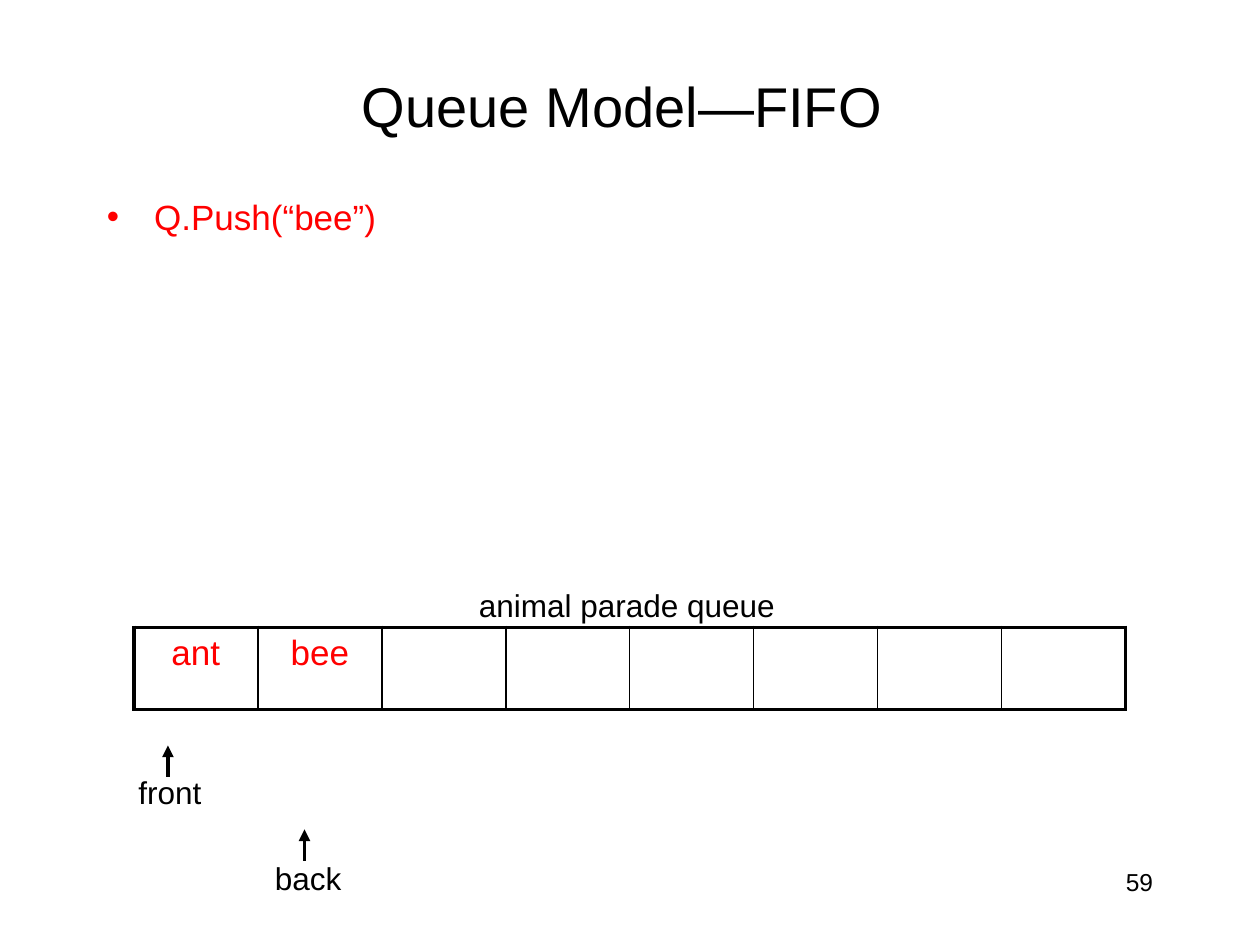
from pptx import Presentation
from pptx import util as u
from pptx.dml.color import RGBColor
from pptx.enum import shapes, text
from pptx.oxml.xmlchemy import OxmlElement

Pt = u.Pt
COLORS = {"ink": "000000", "accent": "FF0000"}
FONT = "Arial"
THICK, THIN = 2.25, 1


def add_element(parent, tag, **attributes):
    element = OxmlElement(tag)
    for name, value in attributes.items():
        element.set(name, str(value))
    parent.append(element)
    return element


def write(frame, words, size, color="ink", align=text.PP_ALIGN.LEFT):
    paragraph = frame.paragraphs[0]
    paragraph.text = words
    paragraph.alignment = align
    paragraph.font.name = FONT
    paragraph.font.size = Pt(size)
    paragraph.font.color.rgb = RGBColor.from_string(COLORS[color])


def add_text(parent, box, words, size, wrap=True, **style):
    shape = parent.add_textbox(*(Pt(length) for length in box))
    shape.text_frame.word_wrap = wrap
    write(shape.text_frame, words, size, **style)
    return shape


def place_title(slide, box, words):
    title = slide.shapes.title
    title.left, title.top, title.width, title.height = (Pt(length) for length in box)
    title.text_frame.vertical_anchor = text.MSO_ANCHOR.MIDDLE
    write(title.text_frame, words, 32, align=text.PP_ALIGN.CENTER)


def add_bullet(slide, box, words):
    left, top, width, height = (Pt(length) for length in box)
    shape = slide.shapes.add_textbox(left, top, width, height)
    shape.text_frame.word_wrap = True
    properties = shape.text_frame.paragraphs[0]._p.get_or_add_pPr()
    properties.set("marL", str(Pt(27)))
    properties.set("indent", str(-Pt(27)))
    add_element(properties, "a:buFont", typeface=FONT)
    add_element(properties, "a:buChar", char="•")
    write(shape.text_frame, words, 20, "accent")


def add_border(cell, side, width):
    line = add_element(cell._tc.get_or_add_tcPr(), f"a:ln{side}", w=Pt(width))
    fill = add_element(line, "a:solidFill")
    add_element(fill, "a:srgbClr", val=COLORS["ink"])


def add_queue(slide, box, items, slots):
    left, top, width, height = box
    add_text(slide.shapes, (left + 190, top - 27.4, 183.6, 28.8),
             "animal parade queue", 18, wrap=False)
    table = slide.shapes.add_table(1, slots, *(Pt(length) for length in box)).table
    table.first_row = table.horz_banding = False
    table.rows[0].height = Pt(height)
    for index in range(slots):
        table.columns[index].width = Pt(width / slots)
        cell = table.cell(0, index)
        add_border(cell, "L", THICK if index == 0 else THIN)
        add_border(cell, "R", THICK if index == slots - 1 else THIN)
        add_border(cell, "T", THICK)
        add_border(cell, "B", THICK)
        cell.fill.background()
        words = items[index] if index < len(items) else ""
        write(cell.text_frame, words, 20, "accent", text.PP_ALIGN.CENTER)


def add_pointer(slide, box, words, arrow_bottom):
    left, top, width, height = box
    group = slide.shapes.add_group_shape()
    add_text(group.shapes, box, words, 18, wrap=False)
    x, bottom = left + 24, top + arrow_bottom
    arrow = group.shapes.add_connector(
        shapes.MSO_CONNECTOR.STRAIGHT, Pt(x), Pt(bottom), Pt(x), Pt(bottom - 18))
    arrow.line.width = Pt(THICK)
    arrow.line.color.rgb = RGBColor.from_string(COLORS["ink"])
    add_element(arrow.line._get_or_add_ln(), "a:tailEnd", type="triangle")
    add_element(arrow._element.spPr, "a:effectLst")


def main():
    presentation = Presentation()
    presentation.slide_width, presentation.slide_height = Pt(720), Pt(540)
    slide = presentation.slides.add_slide(presentation.slide_layouts[5])
    place_title(slide, (54, 30, 612, 60), "Queue Model—FIFO ")
    add_bullet(slide, (54, 108, 612, 180), "Q.Push(“bee”)")
    add_queue(slide, (76.5, 358.5, 566.8, 46.8), ["ant", "bee"], 8)
    add_pointer(slide, (72, 438, 50.4, 28.8), "front", 6)
    add_pointer(slide, (150, 487.2, 52.6, 28.8), "back", 4.8)
    add_text(slide.shapes, (516, 492, 150, 36), "59", 14, align=text.PP_ALIGN.RIGHT)
    presentation.save("out.pptx")


if __name__ == "__main__":
    main()
